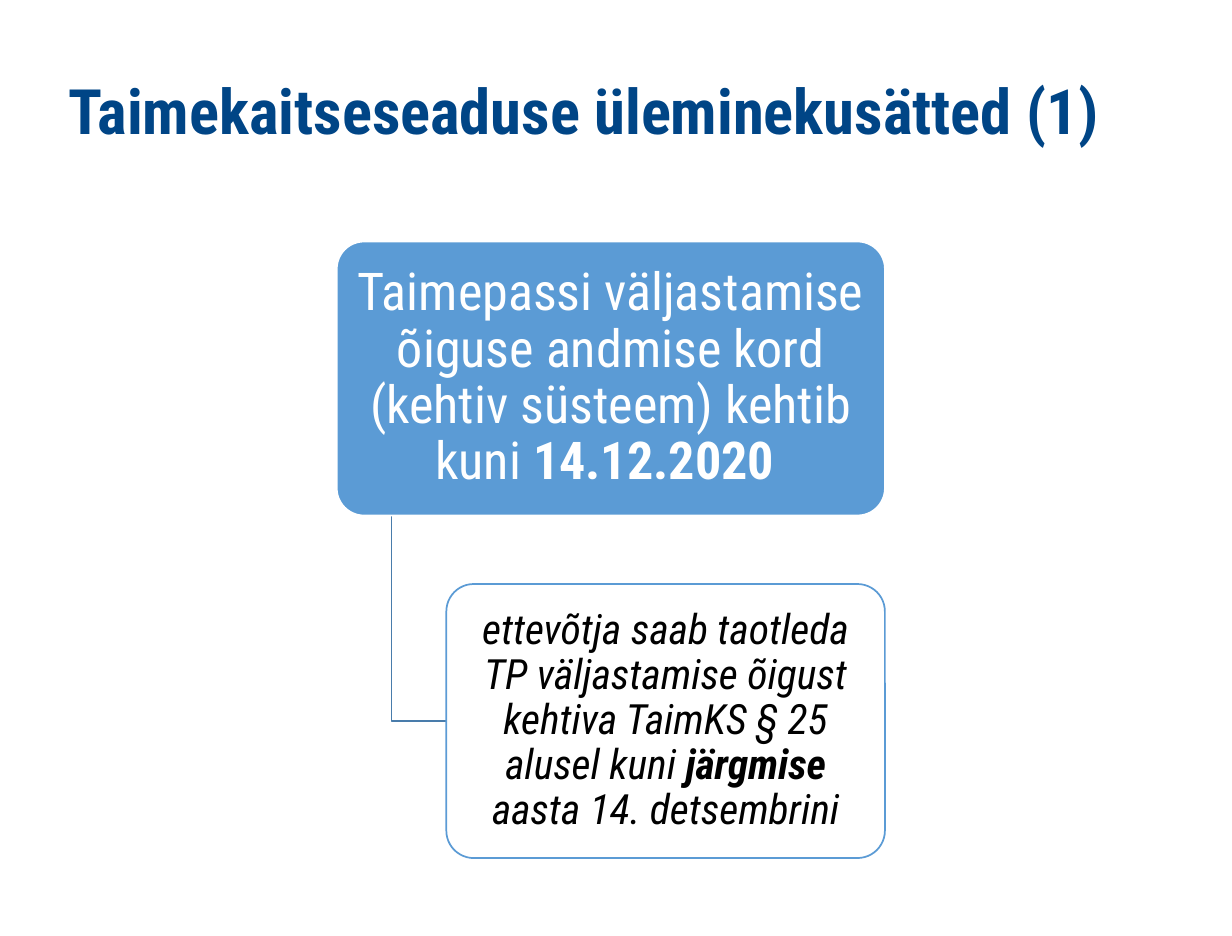
"""Build the slide on the transitional provisions of the plant protection act."""
from lxml.etree import SubElement
from pptx import Presentation
from pptx.dml.color import RGBColor
from pptx.enum.shapes import MSO_SHAPE as Shape
from pptx.enum.text import MSO_ANCHOR as Anchor, PP_ALIGN as Align
from pptx.oxml.ns import qn
from pptx.util import Cm, Inches, Pt

COLORS = {"title": "004586", "blue": "5B9BD5", "elbow": "497CAB",
          "white": "FFFFFF", "black": "000000"}
LEFT, TOP = 2.69, 1.93
COLUMN, ROW = 4.38 / 10, 2.19 / 4


def color(name):
    return RGBColor.from_string(COLORS[name])


def write(box, runs, size, ink, insets, spacing=0.9, align=Align.CENTER,
          anchor=Anchor.MIDDLE, italic=False):
    frame = box.text_frame
    frame.word_wrap = True
    frame.vertical_anchor = anchor
    frame.margin_left, frame.margin_top, frame.margin_right, frame.margin_bottom = map(Inches, insets)
    para = frame.paragraphs[0]
    para.alignment = align
    para.line_spacing = spacing
    for text, bold in runs:
        span = para.add_run()
        span.text = text
        span.font.name = "Roboto Condensed"
        span.font.size = Pt(size)
        span.font.bold = bold
        span.font.italic = italic
        span.font.color.rgb = color(ink)


deck = Presentation()
deck.slide_width, deck.slide_height = Cm(25), Cm(19)
page = deck.slides.add_slide(deck.slide_layouts[6])

title = page.shapes.add_textbox(Inches(0.55), Inches(0.59), Inches(8.66), Inches(1.18))
write(title, [("Taimekaitseseaduse üleminekusätted (1)", True)], 36, "title",
      (0, 0.06, 0, 0), spacing=0.88, align=Align.LEFT, anchor=Anchor.TOP)

elbow_points = [(Inches(LEFT + column * COLUMN), Inches(TOP + row * ROW))
                for column, row in [(1, 4), (1, 7), (2, 7)]]
builder = page.shapes.build_freeform(*elbow_points[0])
builder.add_line_segments(elbow_points[1:], close=False)
elbow = builder.convert_to_shape()
elbow.shadow.inherit = False
elbow.fill.background()
elbow.line.color.rgb = color("elbow")
elbow.line.width = Pt(1)

steps = [
    dict(column=0, row=0, columns=10, fill="blue", opacity=100, line="white",
         runs=[("Taimepassi väljastamise õiguse andmise kord (kehtiv süsteem) kehtib kuni ", False),
               ("14.12.2020 ", True)],
         style=dict(size=30, ink="white", insets=(0.06, 0.04, 0.06, 0.04))),
    dict(column=2, row=5, columns=8, fill="white", opacity=90, line="blue",
         runs=[("ettevõtja saab taotleda TP väljastamise õigust kehtiva TaimKS § 25 alusel kuni ", False),
               ("järgmise ", True),
               ("aasta 14. detsembrini", False)],
         style=dict(size=24, ink="black", insets=(0.05, 0.03, 0.05, 0.03), italic=True)),
]
for step in steps:
    box = page.shapes.add_shape(
        Shape.ROUNDED_RECTANGLE,
        Inches(LEFT + step["column"] * COLUMN), Inches(TOP + step["row"] * ROW),
        Inches(step["columns"] * COLUMN), Inches(4 * ROW))
    box.adjustments[0] = 0.1
    box.shadow.inherit = False
    box.fill.solid()
    box.fill.fore_color.rgb = color(step["fill"])
    if step["opacity"] < 100:
        tint = box.fill._xPr.find(qn("a:solidFill"))[0]
        SubElement(tint, qn("a:alpha"), val=str(step["opacity"] * 1000))
    box.line.color.rgb = color(step["line"])
    box.line.width = Pt(1)
    write(box, step["runs"], **step["style"])

deck.save("out.pptx")
